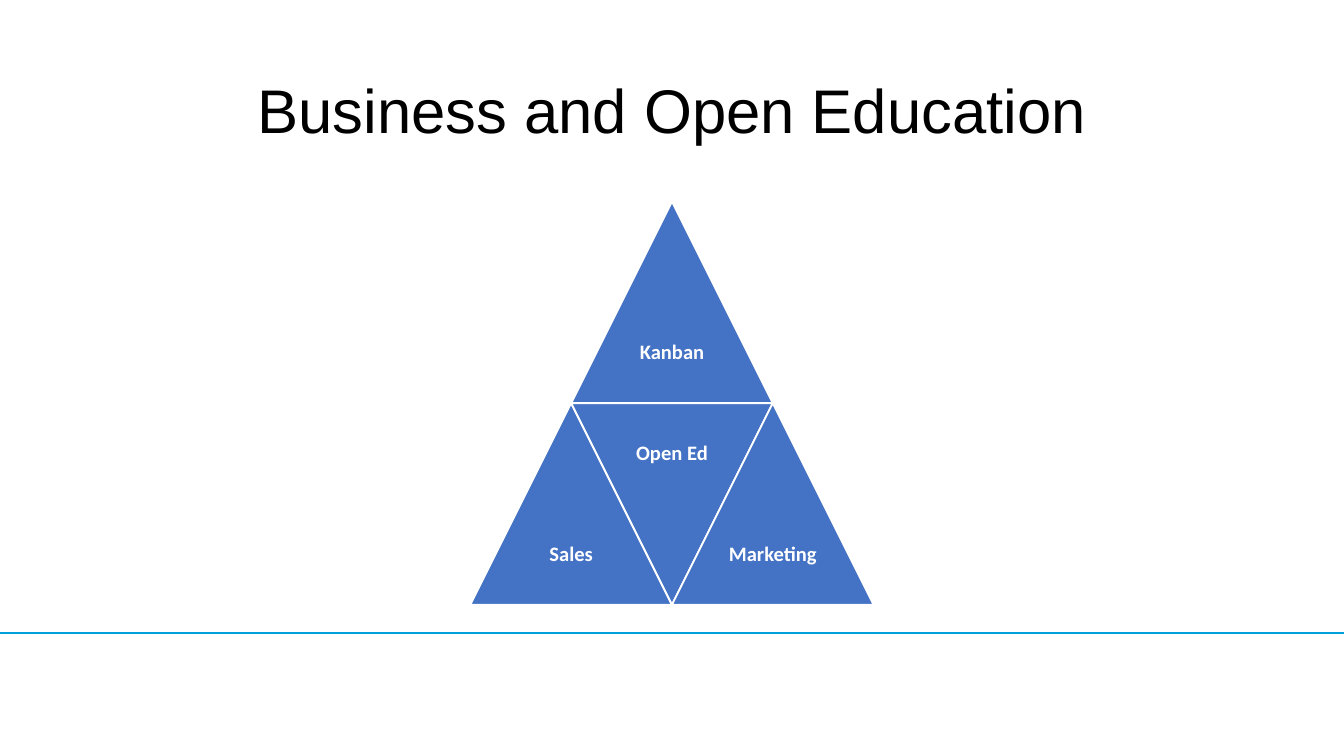
from lxml import etree
from pptx import Presentation
from pptx.dml.color import RGBColor
from pptx.enum import shapes, text
from pptx.oxml import ns
from pptx.util import Inches, Pt


def color(hex_string):
    return RGBColor.from_string(hex_string)


def format_text(text_frame, font_name, size, hex_string, bold=False):
    """Centre the single paragraph in its box and style its font."""
    text_frame.word_wrap = True
    text_frame.vertical_anchor = text.MSO_ANCHOR.MIDDLE
    paragraph = text_frame.paragraphs[0]
    paragraph.alignment = text.PP_ALIGN.CENTER
    paragraph.line_spacing = 0.9
    font = paragraph.runs[0].font
    font.name = font_name
    font.size = Pt(size)
    font.bold = bold
    font.color.rgb = color(hex_string)


# Widescreen, 16:9
presentation = Presentation()
presentation.slide_width = Inches(10)
presentation.slide_height = Inches(10 * 9 / 16)
slide = presentation.slides.add_slide(presentation.slide_layouts[5])

# Rule above the footer
rule = slide.shapes.add_connector(
    shapes.MSO_CONNECTOR.STRAIGHT, 0, Inches(4.71), Inches(10), Inches(4.71))
rule.line.color.rgb = color("00A1DA")
rule.line.width = Pt(1.25)
etree.SubElement(rule._element.spPr, ns.qn("a:effectLst"))

# Title
title = slide.shapes.title
title.left, title.top = Inches(0.69), Inches(0.3)
title.width, title.height = Inches(8.62), Inches(1.09)
title.text_frame.text = "Business and Open Education"
format_text(title.text_frame, "Arial", 33, "000000")

# Pyramid of four triangles: label, left, top, rotation
SIDE = 1.5
LABEL = SIDE / 2
LEFT, TOP = 3.5, 1.5
triangles = [
    ("Kanban", LEFT + SIDE / 2, TOP, 0),
    ("Sales", LEFT, TOP + SIDE, 0),
    ("Open Ed", LEFT + SIDE / 2, TOP + SIDE, 180),
    ("Marketing", LEFT + SIDE, TOP + SIDE, 0),
]
pyramid = slide.shapes.add_group_shape()
for label, left, top, rotation in triangles:
    triangle = pyramid.shapes.add_shape(
        shapes.MSO_SHAPE.ISOSCELES_TRIANGLE,
        Inches(left), Inches(top), Inches(SIDE), Inches(SIDE))
    triangle.rotation = rotation
    triangle.shadow.inherit = False
    triangle.fill.solid()
    triangle.fill.fore_color.rgb = color("4472C4")
    triangle.line.color.rgb = color("FFFFFF")
    triangle.line.width = Pt(1)

    # The label sits in the wide half, upright even on the inverted triangle
    label_top = top if rotation else top + LABEL
    label_box = pyramid.shapes.add_textbox(
        Inches(left + LABEL / 2), Inches(label_top), Inches(LABEL), Inches(LABEL))
    frame = label_box.text_frame
    frame.margin_left = frame.margin_right = Inches(0.03)
    frame.margin_top = frame.margin_bottom = Inches(0.05)
    frame.text = label
    format_text(frame, "Calibri", 11, "FFFFFF", bold=True)

presentation.save("out.pptx")
